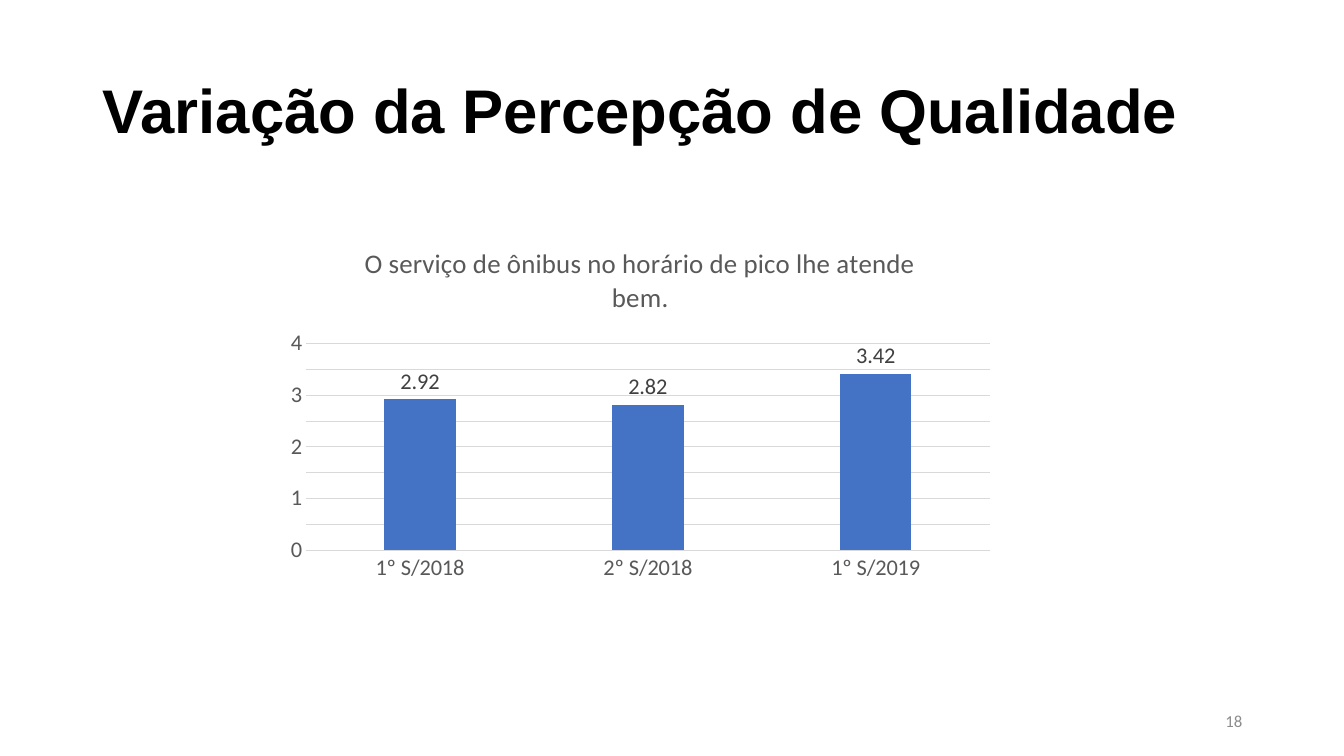
"""Build the slide on the variation of perceived bus service quality."""
from copy import deepcopy

from pptx import Presentation
from pptx import util as u
from pptx.chart.data import CategoryChartData
from pptx.dml.color import RGBColor
from pptx.enum import chart as ch, text as tx
from pptx.oxml.ns import qn

HEADING = "Variação da Percepção de Qualidade"
PAGE = "18"
QUESTION = "O serviço de ônibus no horário de pico lhe atende bem."
SCORES = {"1º S/2018": 2.92, "2º S/2018": 2.82, "1º S/2019": 3.42}

PX = u.Inches(1) // 100
SLIDE_SIZE = (1333, 750)
HEADING_BOX = (92, 40, 1150, 145)
PAGE_BOX = (942, 695, 300, 40)
CHART_BOX = (274, 225, 722, 359)

BLACK = RGBColor(0, 0, 0)
PAGE_GREY = RGBColor(0x8C, 0x8C, 0x8C)
AXIS_GREY = RGBColor(0x59, 0x59, 0x59)
LABEL_GREY = RGBColor(0x40, 0x40, 0x40)
GRID_GREY = RGBColor(0xD9, 0xD9, 0xD9)
BLUE = RGBColor(0x44, 0x72, 0xC4)


def emu(box):
    return [length * PX for length in box]


def style(font, size, color, name="Calibri", bold=False):
    font.size, font.name, font.bold = u.Pt(size), name, bold
    font.color.rgb = color


def rule(line):
    line.color.rgb, line.width = GRID_GREY, u.Pt(0.75)


def write(shape, words, box, align, *look):
    shape.left, shape.top, shape.width, shape.height = emu(box)
    frame = shape.text_frame
    frame.text, frame.word_wrap = words, True
    frame.auto_size = tx.MSO_AUTO_SIZE.NONE
    frame.vertical_anchor = tx.MSO_ANCHOR.MIDDLE
    paragraph = frame.paragraphs[0]
    paragraph.alignment = align
    style(paragraph.runs[0].font, *look)
    return paragraph


def add_grid(axis):
    axis.has_major_gridlines = axis.has_minor_gridlines = True
    rule(axis.major_gridlines.format.line)
    major, minor = (axis._element.find(qn(tag))
                    for tag in ("c:majorGridlines", "c:minorGridlines"))
    minor.append(deepcopy(major.find(qn("c:spPr"))))


def add_scores(slide):
    data = CategoryChartData(number_format="0.00")
    data.categories = list(SCORES)
    data.add_series(QUESTION, list(SCORES.values()))
    scores = slide.shapes.add_chart(
        ch.XL_CHART_TYPE.COLUMN_CLUSTERED, *emu(CHART_BOX), data).chart
    style(scores.font, 16, BLACK)
    scores.has_legend = False
    scores.has_title = True
    question = scores.chart_title.text_frame
    question.text = QUESTION
    style(question.paragraphs[0].runs[0].font, 19.2, AXIS_GREY)

    semesters, grades = scores.category_axis, scores.value_axis
    for axis in (semesters, grades):
        axis.major_tick_mark = axis.minor_tick_mark = ch.XL_TICK_MARK.NONE
        style(axis.tick_labels.font, 16, AXIS_GREY)
    rule(semesters.format.line)
    grades.format.line.fill.background()
    grades.minimum_scale, grades.maximum_scale = 0, 4
    grades.major_unit, grades.minor_unit = 1, 0.5
    add_grid(grades)
    grades.tick_labels.number_format = "0"
    grades.tick_labels.number_format_is_linked = False

    columns = scores.plots[0]
    columns.gap_width, columns.overlap = 219, -27
    columns.vary_by_categories = False
    bars = columns.series[0]
    bars.format.fill.solid()
    bars.format.fill.fore_color.rgb = BLUE
    labels = bars.data_labels
    labels.show_value = True
    labels.position = ch.XL_LABEL_POSITION.OUTSIDE_END
    style(labels.font, 16, LABEL_GREY)


def main():
    deck = Presentation()
    deck.slide_width, deck.slide_height = emu(SLIDE_SIZE)
    slide = deck.slides.add_slide(deck.slide_layouts[5])
    heading = write(slide.shapes.title, HEADING, HEADING_BOX,
                    tx.PP_ALIGN.LEFT, 44, BLACK, "Arial", True)
    heading.line_spacing = 0.9
    page = slide.shapes.add_textbox(*emu(PAGE_BOX))
    write(page, PAGE, PAGE_BOX, tx.PP_ALIGN.RIGHT, 12, PAGE_GREY)
    add_scores(slide)
    deck.save("out.pptx")


if __name__ == "__main__":
    main()
